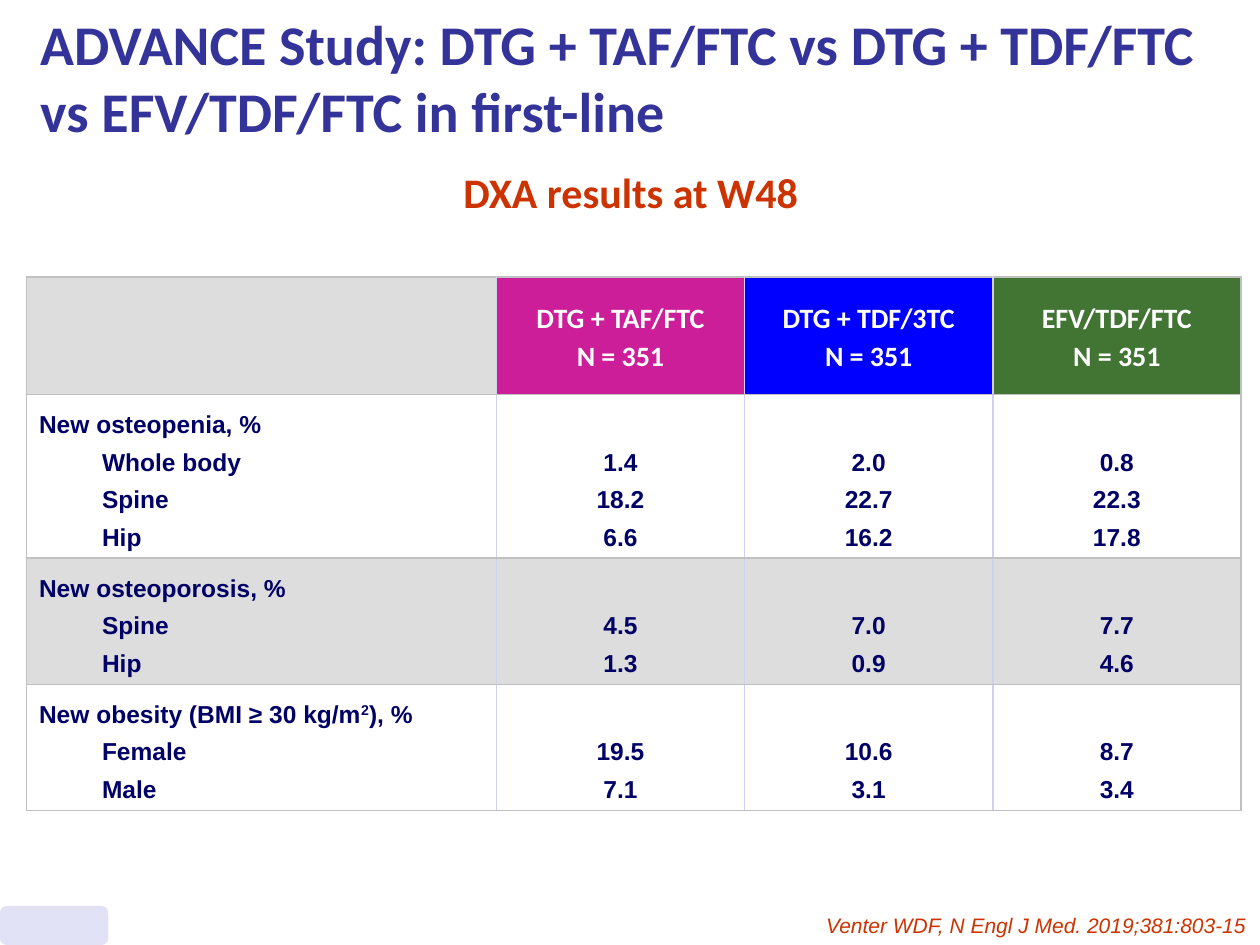
import pptx
import pptx.util
import pptx.dml.color
import pptx.enum.shapes
import pptx.enum.text
import pptx.oxml
import pptx.oxml.ns

Inches, Pt = pptx.util.Inches, pptx.util.Pt
Align = pptx.enum.text.PP_ALIGN
Anchor = pptx.enum.text.MSO_ANCHOR

NAVY, INDIGO, RED, WHITE = "000066", "333399", "CC3300", "FFFFFF"
GREY, LAVENDER, LINE, INNER_LINE = "DDDDDD", "E2E2F6", "C0C0C0", "D0D0F0"


def color(hex_text):
    return pptx.dml.color.RGBColor.from_string(hex_text)


class SlideBuilder:
    """Holds the table text style and the current slide."""
    line_spacing = Pt(21.6)
    indent = Inches(0.5)

    def __init__(self, slide):
        self.slide = slide

    def add_run(self, paragraph, text, size, font, hex_text, bold=True, italic=False):
        run = paragraph.add_run()
        run.text = text
        run.font.name, run.font.size = font, Pt(size)
        run.font.bold, run.font.italic = bold, italic
        run.font.color.rgb = color(hex_text)
        return run

    def add_text(self, box, text, *style, align=Align.LEFT, anchor=Anchor.TOP,
                 wrap=True, **options):
        frame = self.slide.shapes.add_textbox(*map(Inches, box)).text_frame
        frame.word_wrap, frame.vertical_anchor = wrap, anchor
        paragraph = frame.paragraphs[0]
        paragraph.alignment = align
        self.add_run(paragraph, text, *style, **options)

    def add_panel(self, box, fill):
        shape = self.slide.shapes.add_shape(
            pptx.enum.shapes.MSO_SHAPE.ROUNDED_RECTANGLE, *map(Inches, box))
        shape.shadow.inherit = False
        shape.fill.solid()
        shape.fill.fore_color.rgb = color(fill)
        shape.line.fill.background()

    def add_table(self, box, widths, heights):
        shape = self.slide.shapes.add_table(len(heights), len(widths), *map(Inches, box))
        for column, width in zip(shape.table.columns, widths):
            column.width = Inches(width)
        for row, height in zip(shape.table.rows, heights):
            row.height = Inches(height)
        return shape.table

    def style_cell(self, cell, fill, left, right, anchor=Anchor.MIDDLE):
        properties = cell._tc.get_or_add_tcPr()
        for side, line in zip("LRTB", (left, right, LINE, LINE)):
            properties.append(pptx.oxml.parse_xml(
                f'<a:ln{side} {pptx.oxml.ns.nsdecls("a")} w="12700"><a:solidFill>'
                f'<a:srgbClr val="{line}"/></a:solidFill></a:ln{side}>'))
        cell.fill.solid()
        cell.fill.fore_color.rgb = color(fill)
        cell.vertical_anchor = anchor

    def add_cell_lines(self, cell, lines, *style, align=Align.CENTER, indented=False):
        """Each line is a list of text parts; every second part is superscript."""
        for index, parts in enumerate(lines):
            frame = cell.text_frame
            paragraph = frame.add_paragraph() if index else frame.paragraphs[0]
            paragraph.alignment = align
            paragraph.line_spacing = self.line_spacing
            if indented and index:
                paragraph.level = 1
                properties = paragraph._p.get_or_add_pPr()
                properties.set("marL", str(self.indent))
                properties.set("indent", "0")
            for position, part in enumerate(parts):
                run = self.add_run(paragraph, part, *style)
                if position % 2:
                    run._r.get_or_add_rPr().set("baseline", "30000")


ARMS = [("DTG + TAF/FTC", "CC1E99"), ("DTG + TDF/3TC", "0000FF"), ("EFV/TDF/FTC", "427534")]
OUTCOMES = [
    (["New osteopenia, %"], {
        "Whole body": ("1.4", "2.0", "0.8"),
        "Spine": ("18.2", "22.7", "22.3"),
        "Hip": ("6.6", "16.2", "17.8")}),
    (["New osteoporosis, %"], {
        "Spine": ("4.5", "7.0", "7.7"),
        "Hip": ("1.3", "0.9", "4.6")}),
    (["New obesity (BMI ≥ 30 kg/m", "2", "), %"], {
        "Female": ("19.5", "10.6", "8.7"),
        "Male": ("7.1", "3.1", "3.4")}),
]


def main():
    presentation = pptx.Presentation()
    presentation.slide_width, presentation.slide_height = Inches(10), Inches(7.5)
    builder = SlideBuilder(presentation.slides.add_slide(presentation.slide_layouts[6]))

    # Results table: one line of text is 0.3 in high, plus the cell margins
    heights = [0.93] + [0.3 * (len(groups) + 1) + 0.1 for _, groups in OUTCOMES]
    widths = [3.73] + [1.97] * len(ARMS)
    table = builder.add_table((0.21, 2.2, sum(widths), sum(heights)), widths, heights)

    # Header row
    builder.style_cell(table.cell(0, 0), GREY, LINE, INNER_LINE)
    right_lines = [INNER_LINE] * (len(ARMS) - 1) + [LINE]
    for column, (name, fill) in enumerate(ARMS, 1):
        cell = table.cell(0, column)
        builder.style_cell(cell, fill, INNER_LINE, right_lines[column - 1])
        builder.add_cell_lines(cell, [[name], ["N = 351"]], 16, "Calibri", WHITE)

    # Outcome rows, values lined up with the groups at the foot of each cell
    for row, (heading, groups) in enumerate(OUTCOMES, 1):
        fill = WHITE if row % 2 else GREY
        cell = table.cell(row, 0)
        builder.style_cell(cell, fill, LINE, INNER_LINE)
        builder.add_cell_lines(cell, [heading] + [[group] for group in groups],
                               14, "Arial", NAVY, align=Align.LEFT, indented=True)
        for column, values in enumerate(zip(*groups.values()), 1):
            cell = table.cell(row, column)
            builder.style_cell(cell, fill, INNER_LINE, right_lines[column - 1], Anchor.BOTTOM)
            builder.add_cell_lines(cell, [[value] for value in values], 14, "Arial", NAVY)

    # Title and subtitle
    builder.add_text((0.22, 0, 9.78, 1.21),
                     "ADVANCE Study: DTG + TAF/FTC vs DTG + TDF/FTC vs EFV/TDF/FTC in first-line",
                     32, "Calibri", INDIGO, anchor=Anchor.MIDDLE)
    builder.add_text((3.58, 1.27, 2.88, 0.5), "DXA results at W48",
                     24, "Calibri", RED, wrap=False)

    # Footer: plain panel and citation
    builder.add_panel((0, 7.19, 0.86, 0.31), LAVENDER)
    builder.add_text((1.68, 7.19, 8.31, 0.3), "Venter WDF, N Engl J Med. 2019;381:803-15",
                     12, "Arial", RED, align=Align.RIGHT, bold=False, italic=True)

    presentation.save("out.pptx")


if __name__ == "__main__":
    main()
